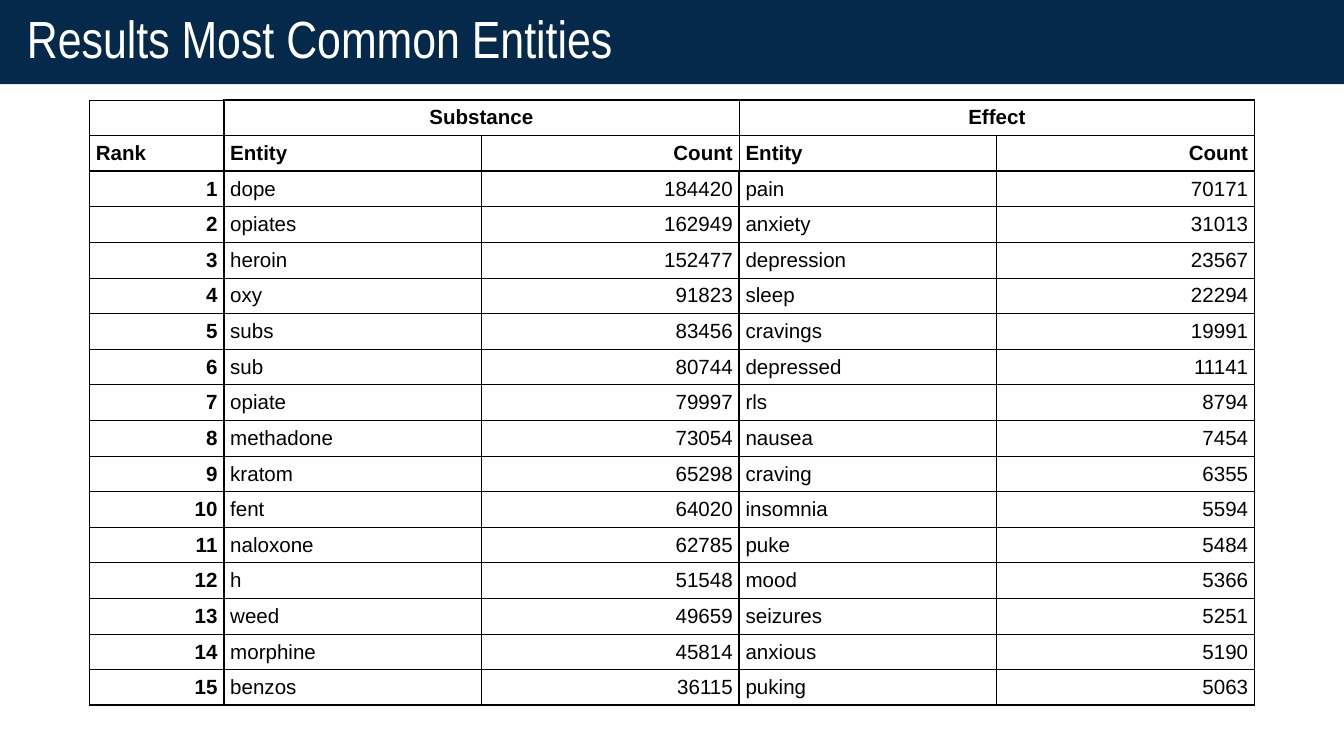
"""Build a slide ranking the most common substance and effect entities."""
from lxml.etree import SubElement
from pptx import Presentation
from pptx.dml.color import RGBColor
from pptx.enum.shapes import MSO_SHAPE
from pptx.enum.text import MSO_ANCHOR, PP_ALIGN
from pptx.oxml.ns import qn
from pptx.util import Cm, Pt

TITLE = "Results Most Common Entities"
HEADS = [
    ("", "Substance", "", "Effect", ""),
    ("Rank", "Entity", "Count", "Entity", "Count"),
]
DATA = [
    ("dope", 184420, "pain", 70171),
    ("opiates", 162949, "anxiety", 31013),
    ("heroin", 152477, "depression", 23567),
    ("oxy", 91823, "sleep", 22294),
    ("subs", 83456, "cravings", 19991),
    ("sub", 80744, "depressed", 11141),
    ("opiate", 79997, "rls", 8794),
    ("methadone", 73054, "nausea", 7454),
    ("kratom", 65298, "craving", 6355),
    ("fent", 64020, "insomnia", 5594),
    ("naloxone", 62785, "puke", 5484),
    ("h", 51548, "mood", 5366),
    ("weed", 49659, "seizures", 5251),
    ("morphine", 45814, "anxious", 5190),
    ("benzos", 36115, "puking", 5063),
]
COLORS = {"navy": "04294A", "white": "FFFFFF", "black": "000000"}
WIDTHS = [2.54, 4.87, 4.87, 4.87, 4.87]
ROW, PAD = 0.66, 0.12
THICK, THIN = 1, 0.5


def color(name):
    return RGBColor.from_string(COLORS[name])


def style(para, face, size, tint, bold=False):
    font = para.font
    font.name, font.size, font.bold = face, Pt(size), bold
    font.color.rgb = color(tint)


def upright(row, edge):
    if edge == 0:
        return THICK if row else THIN
    if edge == 2:
        return THICK if row == 1 else THIN
    if edge == 3:
        return THICK if row > 1 else THIN
    return THIN if edge == 4 else THICK


def level(edge, col, last):
    if edge == 0:
        return THICK if col else THIN
    return THICK if edge in (1, 2, last) else THIN


def border(cell, sides):
    props = cell._tc.get_or_add_tcPr()
    for side, width in sides.items():
        line = SubElement(props, qn(f"a:ln{side}"), w=str(Pt(width)))
        fill = SubElement(line, qn("a:solidFill"))
        SubElement(fill, qn("a:srgbClr"), val=COLORS["black"])


def align(row, col):
    if row == 0:
        return PP_ALIGN.CENTER
    if col in (2, 4) or (col == 0 and row > 1):
        return PP_ALIGN.RIGHT
    return PP_ALIGN.LEFT


def add_title(slide):
    bar = slide.shapes.add_shape(MSO_SHAPE.RECTANGLE, 0, 0, Cm(25.4), Cm(1.59))
    bar.shadow.inherit = False
    bar.fill.solid()
    bar.fill.fore_color.rgb = color("navy")
    bar.line.fill.background()
    frame = bar.text_frame
    frame.word_wrap = True
    frame.vertical_anchor = MSO_ANCHOR.MIDDLE
    frame.margin_left = frame.margin_right = Cm(0.51)
    para = frame.paragraphs[0]
    para.text = TITLE
    para.alignment = PP_ALIGN.LEFT
    para.line_spacing = 0.9
    style(para, "Arial Narrow", 28, "white")


def add_ranks(slide):
    rows = HEADS + [(rank, *item) for rank, item in enumerate(DATA, 1)]
    count = len(rows)
    table = slide.shapes.add_table(
        count, len(WIDTHS), Cm(1.69), Cm(1.89), Cm(sum(WIDTHS)), Cm(ROW * count)
    ).table
    table.first_row = table.horz_banding = False
    for column, width in zip(table.columns, WIDTHS):
        column.width = Cm(width)
    for r, values in enumerate(rows):
        table.rows[r].height = Cm(ROW)
        for c, value in enumerate(values):
            cell = table.cell(r, c)
            border(cell, {
                "L": upright(r, c),
                "R": upright(r, c + 1),
                "T": level(r, c, count),
                "B": level(r + 1, c, count),
            })
            cell.fill.background()
            cell.vertical_anchor = MSO_ANCHOR.BOTTOM
            cell.margin_left = cell.margin_right = Cm(PAD)
            cell.margin_top = cell.margin_bottom = Cm(PAD)
            para = cell.text_frame.paragraphs[0]
            if value:
                para.text = str(value)
            para.alignment = align(r, c)
            style(para, "Arial", 11, "black", r < len(HEADS) or c == 0)
    for c in (1, 3):
        table.cell(0, c).merge(table.cell(0, c + 1))


def main():
    deck = Presentation()
    deck.slide_width, deck.slide_height = Cm(25.4), Cm(14.29)
    slide = deck.slides.add_slide(deck.slide_layouts[6])
    add_title(slide)
    add_ranks(slide)
    deck.save("out.pptx")


if __name__ == "__main__":
    main()
